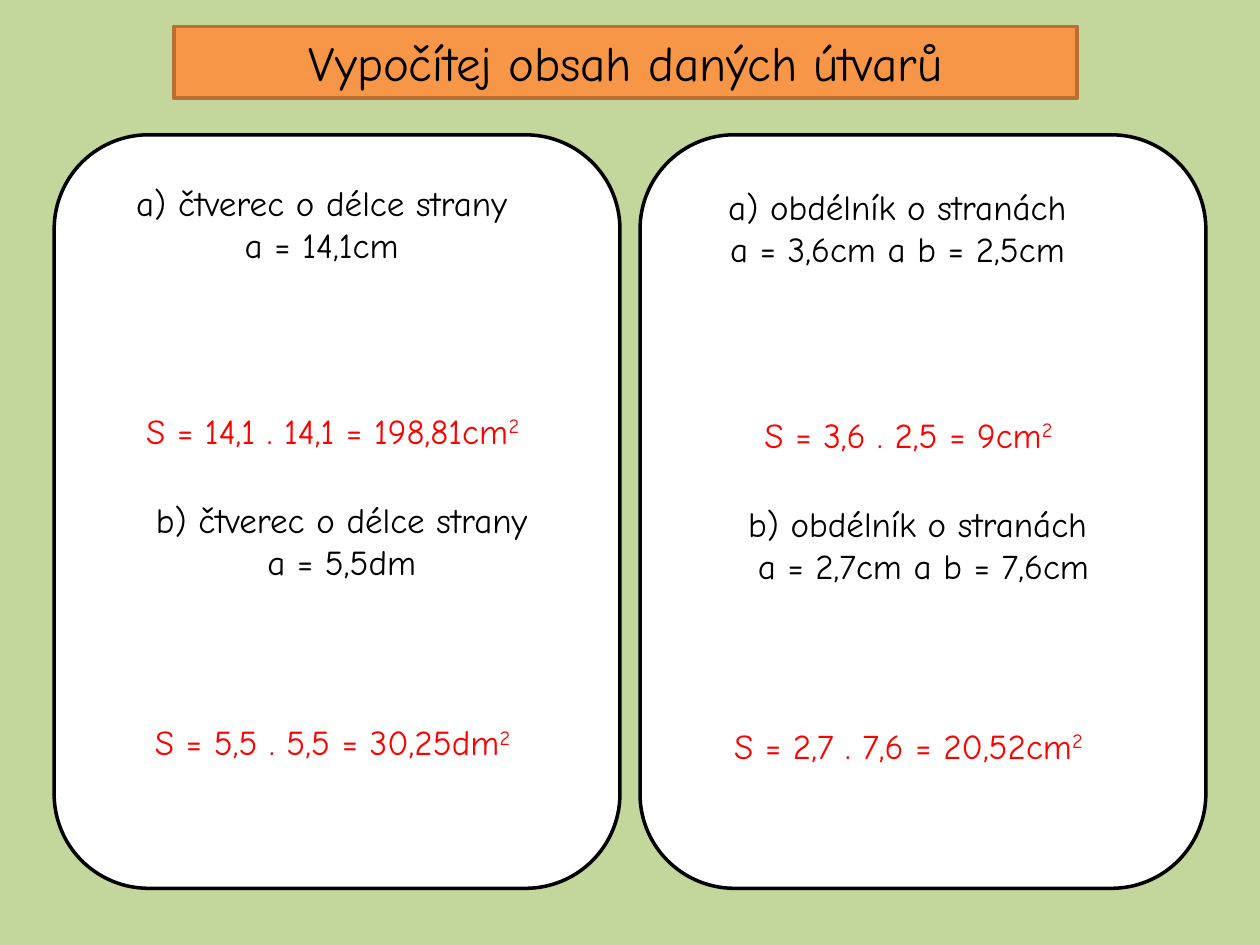
from pptx import Presentation
from pptx.dml.color import RGBColor
from pptx.enum.shapes import MSO_SHAPE
from pptx.enum.text import MSO_ANCHOR, MSO_AUTO_SIZE, PP_ALIGN
from pptx.util import Inches, Pt

PX = Inches(1) // 100  # 100 px to the inch
FONT = "Comic Neue"
PANEL_TOP, PANEL_WIDTH, PANEL_HEIGHT = 107, 449, 598


def emu(*lengths):
    return [length * PX for length in lengths]


def paint(fill, color):
    fill.solid()
    fill.fore_color.rgb = RGBColor.from_string(color)


def outline(shape, color, width=2):
    paint(shape.line.fill, color)
    shape.line.width = Pt(width)


def write(frame, lines, size=20, color="000000", superscript=""):
    """Fill a text frame with centred lines; the superscript ends the last one."""
    frame.word_wrap = True
    for index, line in enumerate(lines):
        paragraph = frame.paragraphs[0] if index == 0 else frame.add_paragraph()
        paragraph.alignment = PP_ALIGN.CENTER
        last = index == len(lines) - 1
        for text, raised in ((line, False), (superscript if last else "", True)):
            if not text:
                continue
            run = paragraph.add_run()
            run.text = text
            run.font.name = FONT
            run.font.size = Pt(size)
            paint(run.font.fill, color)
            if raised:
                run.font._element.set("baseline", "30000")


def add_text(slide, left, top, width, height, lines, **text_format):
    box = slide.shapes.add_textbox(*emu(left, top, width, height))
    write(box.text_frame, lines, **text_format)
    box.text_frame.auto_size = MSO_AUTO_SIZE.SHAPE_TO_FIT_TEXT


def add_title(slide, left, top, width, height, text):
    title = slide.shapes.title
    title.left, title.top, title.width, title.height = emu(left, top, width, height)
    paint(title.fill, "F79646")
    outline(title, "B76F34")
    write(title.text_frame, [text], size=28)
    title.text_frame.vertical_anchor = MSO_ANCHOR.TOP
    title.text_frame.auto_size = MSO_AUTO_SIZE.NONE


def add_panel(slide, left, top, text_left, text_top, exercises):
    """Draw a rounded panel with two exercises, each a question and its answer."""
    panel = slide.shapes.add_shape(
        MSO_SHAPE.ROUNDED_RECTANGLE, *emu(left, top, PANEL_WIDTH, PANEL_HEIGHT))
    panel.shadow.inherit = False
    paint(panel.fill, "FFFFFF")
    outline(panel, "000000")

    x, y = left + text_left, top + text_top
    places = ((0, 0, 181), (16, 252, 428))
    for (indent, question_y, answer_y), (question, answer) in zip(places, exercises):
        add_text(slide, x + indent, y + question_y, 386, 77, question)
        add_text(slide, x, y + answer_y, 394, 44, [answer],
                 color="FF0000", superscript="2")


def main():
    presentation = Presentation()
    presentation.slide_width, presentation.slide_height = emu(1000, 750)
    slide = presentation.slides.add_slide(presentation.slide_layouts[5])
    paint(slide.background.fill, "C3D69B")

    add_title(slide, 138, 21, 717, 57, "Vypočítej obsah daných útvarů")
    squares = [
        (["a) čtverec o délce strany ", "a = 14,1cm "], "S = 14,1 . 14,1 = 198,81cm"),
        (["b) čtverec o délce strany ", "a = 5,5dm "], "S = 5,5 . 5,5 = 30,25dm"),
    ]
    rectangles = [
        (["a) obdélník o stranách ", "a = 3,6cm a b = 2,5cm "], "S = 3,6 . 2,5 = 9cm"),
        (["b) obdélník o stranách ", "a = 2,7cm a b = 7,6cm"], "S = 2,7 . 7,6 = 20,52cm"),
    ]
    add_panel(slide, 43, PANEL_TOP, 24, 32, squares)
    add_panel(slide, 508, PANEL_TOP, 16, 35, rectangles)
    presentation.save("out.pptx")


if __name__ == "__main__":
    main()
